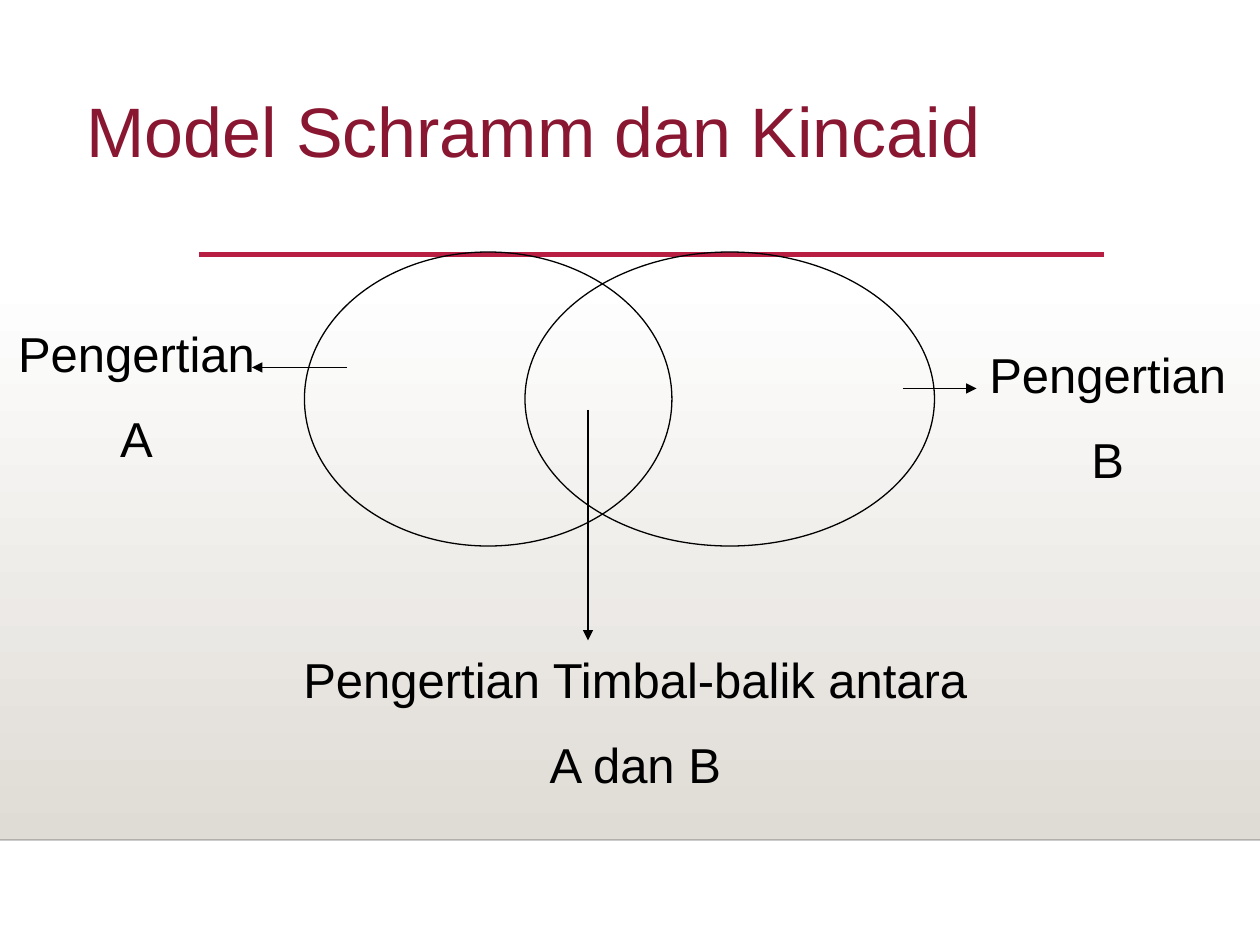
from lxml.etree import SubElement
from pptx import Presentation
from pptx.dml.color import RGBColor
from pptx.enum.shapes import MSO_CONNECTOR, MSO_SHAPE
from pptx.enum.text import MSO_ANCHOR, MSO_AUTO_SIZE, PP_ALIGN
from pptx.oxml.ns import qn
from pptx.util import Pt

COLORS = {
    "black": "000000",
    "white": "FFFFFF",
    "sand": "DFDBD5",
    "title": "891731",
    "rule": "B71E42",
}


def color(name):
    return RGBColor.from_string(COLORS[name])


def set_font(paragraph, size, name):
    paragraph.font.name = "Arial"
    paragraph.font.size = Pt(size)
    paragraph.font.color.rgb = color(name)


def add_title(slide, text):
    title = slide.shapes.title
    title.left, title.top, title.width, title.height = Pt(42), Pt(42), Pt(528), Pt(55.5)
    frame = title.text_frame
    frame.text = text
    frame.word_wrap = True
    frame.auto_size = MSO_AUTO_SIZE.NONE
    frame.vertical_anchor = MSO_ANCHOR.TOP
    frame.margin_top = Pt(8)
    paragraph = frame.paragraphs[0]
    paragraph.alignment = PP_ALIGN.LEFT
    set_font(paragraph, 40, "title")


def add_backdrop(slide):
    shape = slide.shapes.add_shape(MSO_SHAPE.RECTANGLE, Pt(0), Pt(158.5), Pt(720), Pt(321.5))
    shape.shadow.inherit = False
    shape.line.fill.background()
    shape.fill.gradient()
    shape.fill.gradient_angle = 270
    for stop, name in zip(shape.fill.gradient_stops, ("white", "sand")):
        stop.color.rgb = color(name)


def add_line(slide, start, end, name="black", width=0.75, arrow=False, alpha=None):
    line = slide.shapes.add_connector(
        MSO_CONNECTOR.STRAIGHT, *(Pt(value) for value in (*start, *end))
    )
    line.line.color.rgb = color(name)
    line.line.width = Pt(width)
    properties = line.line._get_or_add_ln()
    if alpha is not None:
        fill_color = properties.find(qn("a:solidFill"))[0]
        SubElement(fill_color, qn("a:alpha"), val=str(alpha * 1000))
    if arrow:
        SubElement(properties, qn("a:tailEnd"), type="triangle")
    SubElement(line._element.spPr, qn("a:effectLst"))


def add_circle(slide, left, width):
    shape = slide.shapes.add_shape(MSO_SHAPE.OVAL, Pt(left), Pt(144), Pt(width), Pt(168))
    shape.shadow.inherit = False
    shape.fill.background()
    shape.line.color.rgb = color("black")
    shape.line.width = Pt(0.75)


def add_label(slide, left, top, width, lines):
    box = slide.shapes.add_textbox(Pt(left), Pt(top), Pt(width), Pt(92))
    frame = box.text_frame
    frame.word_wrap = True
    frame.vertical_anchor = MSO_ANCHOR.MIDDLE
    frame.text = "\n".join(lines)
    for index, paragraph in enumerate(frame.paragraphs):
        paragraph.alignment = PP_ALIGN.CENTER
        paragraph.space_before = Pt(15 if index else 0)
        set_font(paragraph, 28, "black")


def main():
    presentation = Presentation()
    presentation.slide_width, presentation.slide_height = Pt(720), Pt(540)
    slide = presentation.slides.add_slide(presentation.slide_layouts[5])
    slide.background.fill.solid()
    slide.background.fill.fore_color.rgb = color("white")

    add_title(slide, "Model Schramm dan Kincaid")
    add_backdrop(slide)
    add_line(slide, (0, 480), (720, 480), width=1, alpha=20)
    add_line(slide, (113.75, 145.5), (631, 145.5), "rule", 2.5)

    add_circle(slide, 300, 234)
    add_circle(slide, 174, 210)

    add_line(slide, (516, 222), (558, 222), arrow=True)
    add_line(slide, (198, 210), (144, 210), arrow=True)
    add_line(slide, (336, 234), (336, 366), arrow=True)

    add_label(slide, 552, 192, 162, ("Pengertian", "B"))
    add_label(slide, 0, 180, 156, ("Pengertian", "A"))
    add_label(slide, 162, 366, 402, ("Pengertian Timbal-balik antara", "A dan B"))

    presentation.save("out.pptx")


if __name__ == "__main__":
    main()
